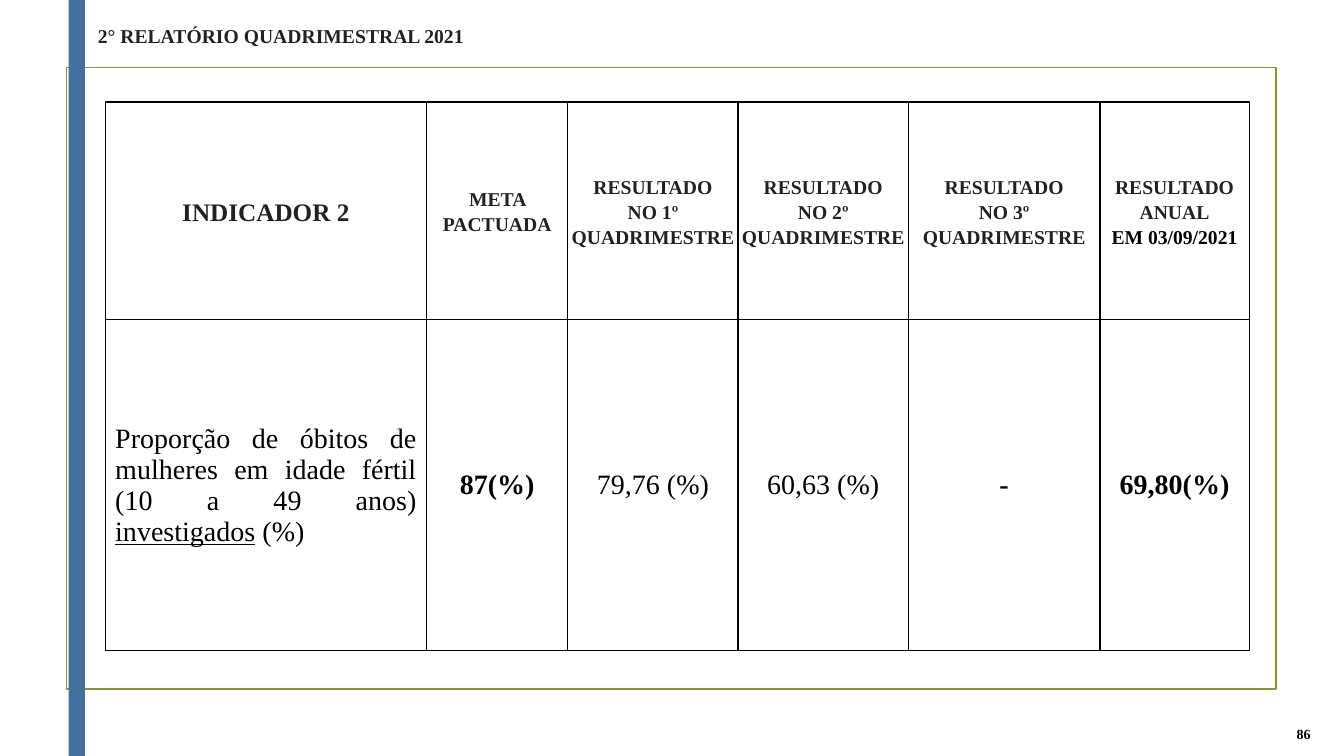
"""Build the slide with the results of indicator 2 for the second four-month report of 2021."""
import dataclasses

import lxml.etree
import pptx
import pptx.dml.color
import pptx.enum.shapes
import pptx.enum.text
import pptx.oxml.ns
import pptx.util

Cm = pptx.util.Cm
Pt = pptx.util.Pt
Align = pptx.enum.text.PP_ALIGN
Anchor = pptx.enum.text.MSO_ANCHOR
Rgb = pptx.dml.color.RGBColor.from_string


@dataclasses.dataclass(frozen=True)
class Theme:
    font: str = "Times New Roman"
    ink: str = "212121"
    black: str = "000000"
    white: str = "FFFFFF"
    bar: str = "44709D"
    frame: str = "83992A"
    number_size: int = 10
    label_size: int = 14
    heading_size: int = 18
    body_size: int = 20


theme = Theme()


def add_span(para, text, size, color, bold=True, underline=False):
    span = para.add_run()
    span.text = text
    span.font.name = theme.font
    span.font.size = Pt(size)
    span.font.color.rgb = Rgb(color)
    span.font.bold = bold
    span.font.underline = underline


def format_cell(cell):
    properties = cell._tc.get_or_add_tcPr()
    for side in ("a:lnL", "a:lnR", "a:lnT", "a:lnB"):
        border = lxml.etree.SubElement(properties, pptx.oxml.ns.qn(side), w=str(Pt(1)))
        paint = lxml.etree.SubElement(border, pptx.oxml.ns.qn("a:solidFill"))
        lxml.etree.SubElement(paint, pptx.oxml.ns.qn("a:srgbClr"), val=theme.black)
    cell.fill.solid()
    cell.fill.fore_color.rgb = Rgb(theme.white)
    cell.vertical_anchor = Anchor.MIDDLE


deck = pptx.Presentation()
deck.slide_width = Cm(33.87)
deck.slide_height = Cm(19.05)
page = deck.slides.add_slide(deck.slide_layouts[5])

title = page.shapes.title
title.left, title.top, title.width, title.height = Cm(2.21), Cm(0.46), Cm(10.16), Cm(0.86)
title.text_frame.word_wrap = False
title.text_frame.auto_size = pptx.enum.text.MSO_AUTO_SIZE.NONE
title.text_frame.vertical_anchor = Anchor.MIDDLE
title_para = title.text_frame.paragraphs[0]
title_para.alignment = Align.LEFT
add_span(title_para, "2° RELATÓRIO QUADRIMESTRAL 2021", theme.label_size, theme.ink)

rectangle = pptx.enum.shapes.MSO_SHAPE.RECTANGLE
frame = page.shapes.add_shape(rectangle, Cm(1.68), Cm(1.7), Cm(30.48), Cm(15.67))
frame.shadow.inherit = False
frame.fill.background()
frame.line.color.rgb = Rgb(theme.frame)
frame.line.width = Pt(1.25)

bar = page.shapes.add_shape(rectangle, Cm(1.73), 0, Cm(0.41), deck.slide_height)
bar.shadow.inherit = False
bar.fill.solid()
bar.fill.fore_color.rgb = Rgb(theme.bar)
bar.line.fill.background()

number_box = page.shapes.add_textbox(Cm(28.83), Cm(17.93), Cm(4.45), Cm(1.12))
number_box.text_frame.word_wrap = True
number_box.text_frame.vertical_anchor = Anchor.MIDDLE
number_para = number_box.text_frame.paragraphs[0]
number_para.alignment = Align.RIGHT
add_span(number_para, "86", theme.number_size, theme.black)

column_widths = [8.1, 3.56, 4.29, 4.29, 4.83, 3.76]
row_heights = [5.49, 8.33]
table = page.shapes.add_table(
    len(row_heights), len(column_widths), Cm(2.65), Cm(2.57),
    Cm(sum(column_widths)), Cm(sum(row_heights))).table
table.first_row = False
table.horz_banding = False
for column, width in zip(table.columns, column_widths):
    column.width = Cm(width)
for row, height in zip(table.rows, row_heights):
    row.height = Cm(height)

headings = [
    [("INDICADOR 2", theme.heading_size, theme.ink)],
    [("META PACTUADA", theme.label_size, theme.ink)],
    *[[("RESULTADO", theme.label_size, theme.ink),
       (f"NO {term}º QUADRIMESTRE", theme.label_size, theme.ink)] for term in (1, 2, 3)],
    [("RESULTADO ANUAL", theme.label_size, theme.ink),
     ("EM 03/09/2021", theme.label_size, theme.black)],
]
for cell, lines in zip(table.rows[0].cells, headings):
    format_cell(cell)
    cell.margin_left = cell.margin_right = cell.margin_top = cell.margin_bottom = Cm(0.02)
    for index, (text, size, color) in enumerate(lines):
        para = cell.text_frame.add_paragraph() if index else cell.text_frame.paragraphs[0]
        para.alignment = Align.CENTER
        para.line_spacing = 1.15
        add_span(para, text, size, color)

results = [
    (Align.JUSTIFY, [("Proporção de óbitos de mulheres em idade fértil (10 a 49 anos) ", False, False),
                     ("investigados", False, True), (" (%)", False, False)]),
    (Align.CENTER, [("87(%)", True, False)]),
    (Align.CENTER, [("79,76 (%)", False, False)]),
    (Align.CENTER, [("60,63 (%)", False, False)]),
    (Align.CENTER, [("-", True, False)]),
    (Align.CENTER, [("69,80(%)", True, False)]),
]
for cell, (alignment, spans) in zip(table.rows[1].cells, results):
    format_cell(cell)
    para = cell.text_frame.paragraphs[0]
    para.alignment = alignment
    for text, bold, underline in spans:
        add_span(para, text, theme.body_size, theme.black, bold, underline)

deck.save("out.pptx")
